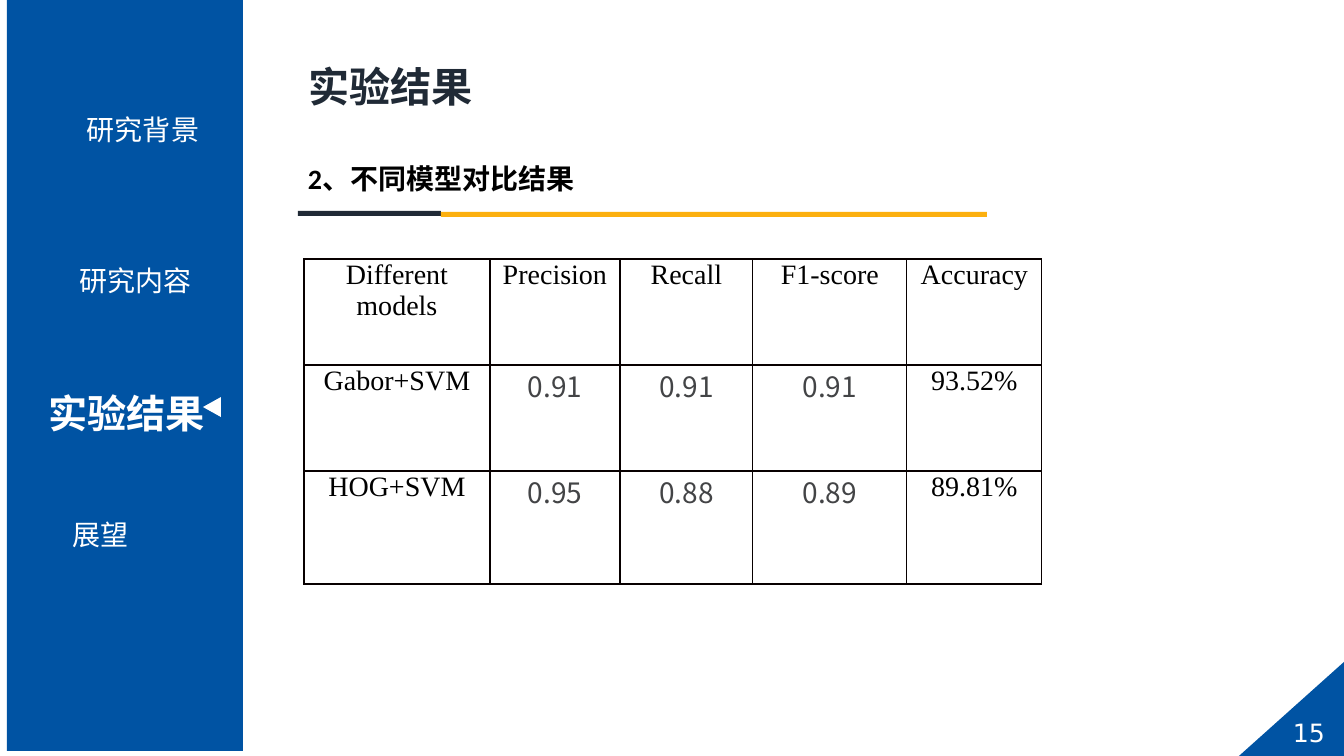
from pptx import Presentation
from pptx.dml.color import RGBColor
from pptx.enum.shapes import MSO_SHAPE as Shape
from pptx.enum.text import MSO_ANCHOR as Anchor, PP_ALIGN as Align
from pptx.oxml import parse_xml
from pptx.oxml.ns import nsdecls
from pptx.util import Pt

PX = 914400 / 100.8
BLUE = RGBColor(0x00, 0x53, 0xA3)
NAVY = RGBColor(0x20, 0x2A, 0x36)
AMBER = RGBColor(0xFC, 0xB0, 0x0F)
GRAY = RGBColor(0x43, 0x44, 0x46)
BLACK = RGBColor(0x00, 0x00, 0x00)
WHITE = RGBColor(0xFF, 0xFF, 0xFF)
CJK = "Noto Sans CJK SC"


def box(*lengths):
    return [round(length * PX) for length in lengths]


def write(frame, text, size, font, color, bold=False, align=Align.LEFT):
    paragraph = frame.paragraphs[0]
    paragraph.alignment = align
    run = paragraph.add_run()
    run.text = text
    run.font.size = Pt(size)
    run.font.name = font
    run.font.bold = bold
    run.font.color.rgb = color
    latin = run.font._element.find("{*}latin")
    latin.addnext(parse_xml(f'<a:ea {nsdecls("a")} typeface="{CJK}"/>'))


deck = Presentation()
deck.slide_width, deck.slide_height = box(1344, 756)
slide = deck.slides.add_slide(deck.slide_layouts[5])

title = slide.shapes.title
title.left, title.top, title.width, title.height = box(298, 56, 185, 59)
title.text_frame.word_wrap = False
title.text_frame.vertical_anchor = Anchor.TOP
write(title.text_frame, "实验结果", 29.4, "Arial", NAVY, True)

sidebar = slide.shapes.add_group_shape()
for owner, kind, place, color, turn in [
    (slide, Shape.RIGHT_TRIANGLE, (1239, 662, 105, 94), BLUE, 0),
    (slide, Shape.RECTANGLE, (298, 211, 143, 5), NAVY, 0),
    (slide, Shape.RECTANGLE, (441, 212, 546, 5), AMBER, 0),
    (sidebar, Shape.RECTANGLE, (7, -5, 236, 756), BLUE, 0),
    (sidebar, Shape.ISOSCELES_TRIANGLE, (202, 398, 20, 18), WHITE, 270),
]:
    block = owner.shapes.add_shape(kind, *box(*place))
    block.shadow.inherit = False
    block.fill.solid()
    block.fill.fore_color.rgb = color
    block.line.fill.background()
    block.rotation = turn
    if kind == Shape.RIGHT_TRIANGLE:
        block._element.spPr.xfrm.set("flipH", "1")
        block.text_frame.vertical_anchor = Anchor.MIDDLE
        write(block.text_frame, "15", 18, "DejaVu Sans", WHITE, align=Align.CENTER)

for owner, text, place, size, font, color, bold, align in [
    (slide, "2、不同模型对比结果", (298, 157, 333, 44), 20, "Calibri", BLACK, True, Align.LEFT),
    (sidebar, "研究背景", (28, 108, 181, 92), 20, CJK, WHITE, False, Align.RIGHT),
    (sidebar, "研究内容", (36, 259, 166, 78), 20, CJK, WHITE, False, Align.RIGHT),
    (sidebar, "实验结果", (21, 384, 194, 57), 28, CJK, WHITE, True, Align.RIGHT),
    (slide, "展望", (63, 513, 140, 44), 20, CJK, WHITE, False, Align.LEFT),
]:
    label = owner.shapes.add_textbox(*box(*place))
    label.text_frame.word_wrap = True
    write(label.text_frame, text, size, font, color, bold, align)

scores = [
    ("Different models", "Precision", "Recall", "F1-score", "Accuracy"),
    ("Gabor+SVM", "0.91", "0.91", "0.91", "93.52%"),
    ("HOG+SVM", "0.95", "0.88", "0.89", "89.81%"),
]
table = slide.shapes.add_table(3, 5, *box(304, 259, 738, 325)).table
table.first_row = table.horz_banding = False
for column, width in zip(table.columns, box(186, 130, 133, 154, 135)):
    column.width = width
for row, height in zip(table.rows, box(106, 106, 113)):
    row.height = height
for r, values in enumerate(scores):
    for c, value in enumerate(values):
        cell = table.cell(r, c)
        cell.margin_left = cell.margin_right = round(7 * PX)
        cell.margin_top = cell.margin_bottom = 0
        measured = r > 0 and 0 < c < 4
        font, color = (CJK, GRAY) if measured else ("Times New Roman", BLACK)
        write(cell.text_frame, value, 20, font, color, align=Align.CENTER)
        borders = cell._tc.get_or_add_tcPr()
        for side in ("lnL", "lnR", "lnT", "lnB"):
            borders.append(parse_xml(
                f'<a:{side} {nsdecls("a")} w="12700"><a:solidFill>'
                f'<a:srgbClr val="080000"/></a:solidFill></a:{side}>'))
        cell.fill.background()

deck.save("out.pptx")
